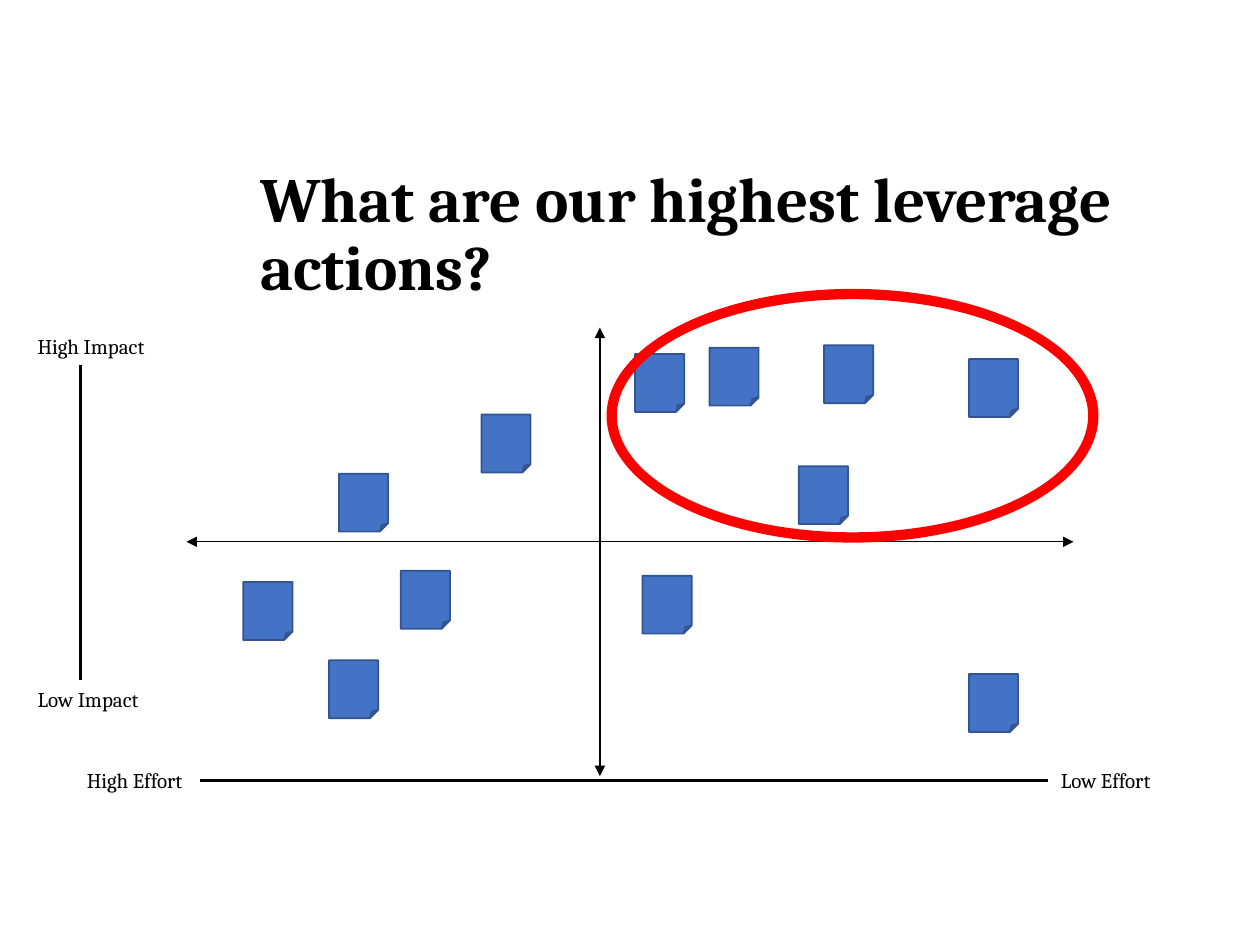
from lxml.etree import SubElement
from pptx import Presentation
from pptx.dml.color import RGBColor
from pptx.enum.shapes import MSO_CONNECTOR, MSO_SHAPE
from pptx.enum.text import MSO_ANCHOR, MSO_AUTO_SIZE
from pptx.oxml.ns import qn
from pptx.util import Pt

COLORS = {"ink": "000000", "note": "4472C4", "note_edge": "325491", "highlight": "FF0000"}
FONT = "Cambria"
LABEL_HEIGHT = 21.6
NOTE_SIZE = (28.1, 33.1)
NOTE_OFFSETS = [
    (256.3, 15.1), (298.8, 11.5), (349.9, 79.2), (447.1, 18),
    (364.3, 10.1), (260.6, 141.8), (168.5, 49.7), (32.4, 145.4),
    (81.4, 190.1), (122.4, 139), (87.1, 83.5), (447.1, 198),
]


def color(name):
    """Return the named palette colour."""
    return RGBColor.from_string(COLORS[name])


def add_text(slide, text, left, top, width, height, size, bold=False):
    """Add a text box with one formatted paragraph."""
    shape = slide.shapes.add_textbox(Pt(left), Pt(top), Pt(width), Pt(height))
    shape.text_frame.text = text
    font = shape.text_frame.paragraphs[0].runs[0].font
    font.name, font.size, font.bold = FONT, Pt(size), bold
    font.color.rgb = color("ink")
    return shape


def add_label(slide, text, left, top, width):
    """Add a one-line label that ends a scale."""
    shape = add_text(slide, text, left, top, width, LABEL_HEIGHT, 12)
    shape.text_frame.word_wrap = False
    shape.text_frame.auto_size = MSO_AUTO_SIZE.SHAPE_TO_FIT_TEXT
    return shape


def add_line(slide, start, end, weight, arrows=False):
    """Add a straight line, with arrowheads at both ends if asked."""
    points = [Pt(value) for value in (*start, *end)]
    connector = slide.shapes.add_connector(MSO_CONNECTOR.STRAIGHT, *points)
    connector.line.color.rgb = color("ink")
    connector.line.width = Pt(weight)
    if arrows:
        outline = connector.line._get_or_add_ln()
        for tag in ("a:headEnd", "a:tailEnd"):
            SubElement(outline, qn(tag), type="triangle")
    SubElement(connector._element.spPr, qn("a:effectLst"))
    return connector


def add_filled_shape(slide, kind, left, top, width, height, fill, edge):
    """Add a flat preset shape with a thin outline."""
    shape = slide.shapes.add_shape(kind, Pt(left), Pt(top), Pt(width), Pt(height))
    shape.shadow.inherit = False
    shape.fill.solid()
    shape.fill.fore_color.rgb = color(fill)
    shape.line.color.rgb = color(edge)
    shape.line.width = Pt(1)
    return shape


def add_title(slide, left, top, width, height):
    """Place the slide's question."""
    shape = add_text(slide, "What are our highest leverage actions?", left, top, width, height, 36, True)
    shape.text_frame.word_wrap = True
    shape.text_frame.vertical_anchor = MSO_ANCHOR.MIDDLE
    shape.text_frame.paragraphs[0].line_spacing = 0.9


def add_axes(slide, left, top, width, height):
    """Draw the crossing axes of the matrix."""
    across, down = left + 236.2, top + 122.4
    add_line(slide, (left, down), (left + width, down), 0.75, True)
    add_line(slide, (across, top), (across, top + height), 0.75, True)


def add_impact_scale(slide, left, top, width, height):
    """Draw the vertical scale between its two labels."""
    low_top = top + height - LABEL_HEIGHT
    add_label(slide, "High Impact", left, top, width)
    add_label(slide, "Low Impact", left, low_top, width - 3.6)
    add_line(slide, (left + 31.7, top + LABEL_HEIGHT), (left + 31.7, low_top), 1.5)


def add_effort_scale(slide, left, top, width):
    """Draw the horizontal scale between its two labels."""
    label_width, middle = 72, top + LABEL_HEIGHT / 2
    low_left = left + width - label_width
    low_label = add_label(slide, "Low Effort", low_left, top, label_width)
    add_label(slide, "High Effort", left, top, label_width + 3.6)
    line = add_line(slide, (low_left, middle), (left + label_width, middle), 1.5)
    line.begin_connect(low_label, 1)


def add_notes(slide, left, top):
    """Scatter the action notes and circle those with high leverage."""
    for across, down in NOTE_OFFSETS:
        add_filled_shape(slide, MSO_SHAPE.FOLDED_CORNER, left + across, top + down,
                         *NOTE_SIZE, "note", "note_edge")
    ring = add_filled_shape(slide, MSO_SHAPE.DONUT, left + 240.5, top - 21.6, 280.1, 144,
                            "highlight", "highlight")
    ring.adjustments[0] = 0.034


def main():
    """Build and save the slide."""
    presentation = Presentation()
    presentation.slide_width, presentation.slide_height = Pt(720), Pt(540)
    slide = presentation.slides.add_slide(presentation.slide_layouts[6])
    matrix_left, matrix_top = 106.6, 187.2
    add_title(slide, 141.8, 106.6, 528.5, 56.9)
    add_axes(slide, matrix_left, matrix_top, 506.9, 256.3)
    add_impact_scale(slide, 14.4, matrix_top, 82.1, 223.2)
    add_effort_scale(slide, 42.5, 435.2, 628.6)
    add_notes(slide, matrix_left, matrix_top)
    presentation.save("out.pptx")


if __name__ == "__main__":
    main()
